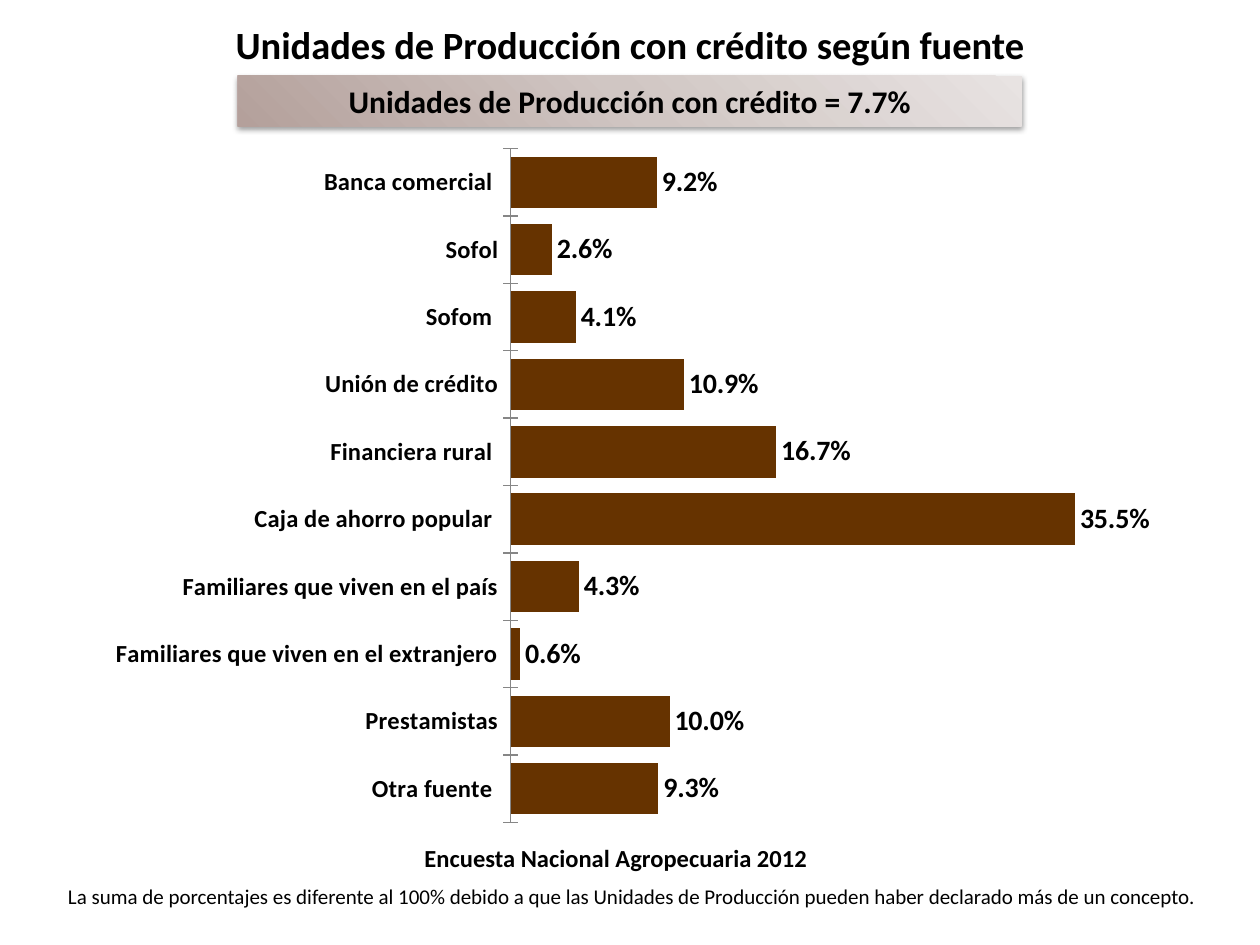
from lxml.etree import SubElement
from pptx import Presentation
from pptx.chart.data import CategoryChartData
from pptx.dml.color import RGBColor
from pptx.enum.chart import XL_CHART_TYPE, XL_LABEL_POSITION, XL_TICK_MARK
from pptx.enum.shapes import MSO_SHAPE
from pptx.enum.text import MSO_ANCHOR, PP_ALIGN
from pptx.oxml import parse_xml
from pptx.oxml.ns import nsdecls, qn
from pptx.util import Pt

BLACK = RGBColor(0x00, 0x00, 0x00)
WHITE = RGBColor(0xFF, 0xFF, 0xFF)
BROWN = RGBColor(0x66, 0x33, 0x00)
AXIS_GRAY = RGBColor(0x86, 0x86, 0x86)
BANNER_STOPS = [
    (0, RGBColor(0xB4, 0xA0, 0x9B)),
    (50, RGBColor(0xD0, 0xC6, 0xC3)),
    (100, RGBColor(0xE8, 0xE3, 0xE2)),
]

CREDIT_SOURCES = [
    ("Otra fuente ", 0.093),
    ("Prestamistas", 0.100),
    ("Familiares que viven en el extranjero", 0.006),
    ("Familiares que viven en el país", 0.043),
    ("Caja de ahorro popular ", 0.355),
    ("Financiera rural ", 0.167),
    ("Unión de crédito", 0.109),
    ("Sofom ", 0.041),
    ("Sofol", 0.026),
    ("Banca comercial ", 0.092),
]


class SlideBuilder:
    font_name = "Calibri"
    percent = "0.0%"

    def __init__(self, slide):
        self.slide = slide

    def style_font(self, font, size, bold=False):
        font.name = self.font_name
        font.size = Pt(size)
        font.bold = bold
        font.color.rgb = BLACK

    def set_text(self, shape, text, size, bold=False, wrap=True):
        frame = shape.text_frame
        frame.word_wrap = wrap
        frame.vertical_anchor = MSO_ANCHOR.MIDDLE
        paragraph = frame.paragraphs[0]
        paragraph.text = text
        paragraph.alignment = PP_ALIGN.CENTER if wrap else PP_ALIGN.LEFT
        self.style_font(paragraph.font, size, bold)

    def title(self, text, left, top, width, height, size):
        heading = self.slide.shapes.title
        heading.left, heading.top = Pt(left), Pt(top)
        heading.width, heading.height = Pt(width), Pt(height)
        self.set_text(heading, text, size, bold=True)

    def box(self, text, left, top, width, height, size, bold=False):
        box = self.slide.shapes.add_shape(
            MSO_SHAPE.RECTANGLE, Pt(left), Pt(top), Pt(width), Pt(height))
        box.shadow.inherit = False
        box.fill.solid()
        box.fill.fore_color.rgb = WHITE
        box.line.fill.background()
        self.set_text(box, text, size, bold)
        return box

    def banner(self, text, left, top, width, height, size):
        """Add a box with a gradient spreading from its lower left and a soft shadow."""
        properties = self.box(text, left, top, width, height, size, bold=True)._element.spPr
        stops = "".join(
            f'<a:gs pos="{position * 1000}"><a:srgbClr val="{color}"/></a:gs>'
            for position, color in BANNER_STOPS)
        gradient = parse_xml(
            f'<a:gradFill {nsdecls("a")} rotWithShape="1"><a:gsLst>{stops}</a:gsLst>'
            '<a:path path="circle"><a:fillToRect t="100000" r="100000"/></a:path>'
            '</a:gradFill>')
        properties.replace(properties.find(qn("a:solidFill")), gradient)
        shadow = SubElement(
            properties.find(qn("a:effectLst")), qn("a:outerShdw"),
            blurRad=str(Pt(3.1)), dist=str(Pt(1.6)), dir="5400000", rotWithShape="0")
        shadow_color = SubElement(shadow, qn("a:srgbClr"), val=str(BLACK))
        SubElement(shadow_color, qn("a:alpha"), val="38000")

    def label(self, text, left, top, width, height, size):
        label = self.slide.shapes.add_textbox(Pt(left), Pt(top), Pt(width), Pt(height))
        self.set_text(label, text, size, bold=True, wrap=False)

    def bar_chart(self, rows, left, top, width, height):
        data = CategoryChartData(number_format=self.percent)
        data.categories = [name for name, _ in rows]
        data.add_series("Series 1", [share for _, share in rows])
        chart = self.slide.shapes.add_chart(
            XL_CHART_TYPE.BAR_CLUSTERED, Pt(left), Pt(top), Pt(width), Pt(height), data).chart
        chart.has_legend = False
        chart.has_title = False
        self.style_font(chart.font, 10)

        sources = chart.category_axis
        sources.major_tick_mark = XL_TICK_MARK.CROSS
        sources.minor_tick_mark = XL_TICK_MARK.NONE
        sources.format.line.color.rgb = AXIS_GRAY
        self.style_font(sources.tick_labels.font, 14, bold=True)

        shares = chart.value_axis
        shares.visible = False
        shares.has_major_gridlines = False
        shares.minimum_scale, shares.maximum_scale = 0, 0.4
        shares.tick_labels.number_format = self.percent
        shares.tick_labels.number_format_is_linked = False

        plot = chart.plots[0]
        plot.gap_width = 31
        plot.vary_by_categories = False
        bars = plot.series[0]
        bars.format.fill.solid()
        bars.format.fill.fore_color.rgb = BROWN
        values = bars.data_labels
        values.show_value = True
        values.position = XL_LABEL_POSITION.OUTSIDE_END
        values.number_format = self.percent
        values.number_format_is_linked = False
        self.style_font(values.font, 16, bold=True)


def main():
    presentation = Presentation()
    presentation.slide_width, presentation.slide_height = Pt(720), Pt(540)
    title_only = presentation.slide_layouts[5]
    builder = SlideBuilder(presentation.slides.add_slide(title_only))

    builder.title("Unidades de Producción con crédito según fuente", 0, 8, 720, 34, 22)
    builder.banner("Unidades de Producción con crédito = 7.7%", 136, 43.2, 448, 29, 18)
    builder.bar_chart(CREDIT_SOURCES, 54, 77, 613.5, 401)
    builder.box(
        " La suma de porcentajes es diferente al 100% debido a que las Unidades de "
        "Producción pueden haber declarado más de un concepto.",
        17, 501, 686, 22, 12)
    builder.label("Encuesta Nacional Agropecuaria 2012", 235.5, 478, 235, 24.5, 14)
    presentation.save("out.pptx")


if __name__ == "__main__":
    main()
